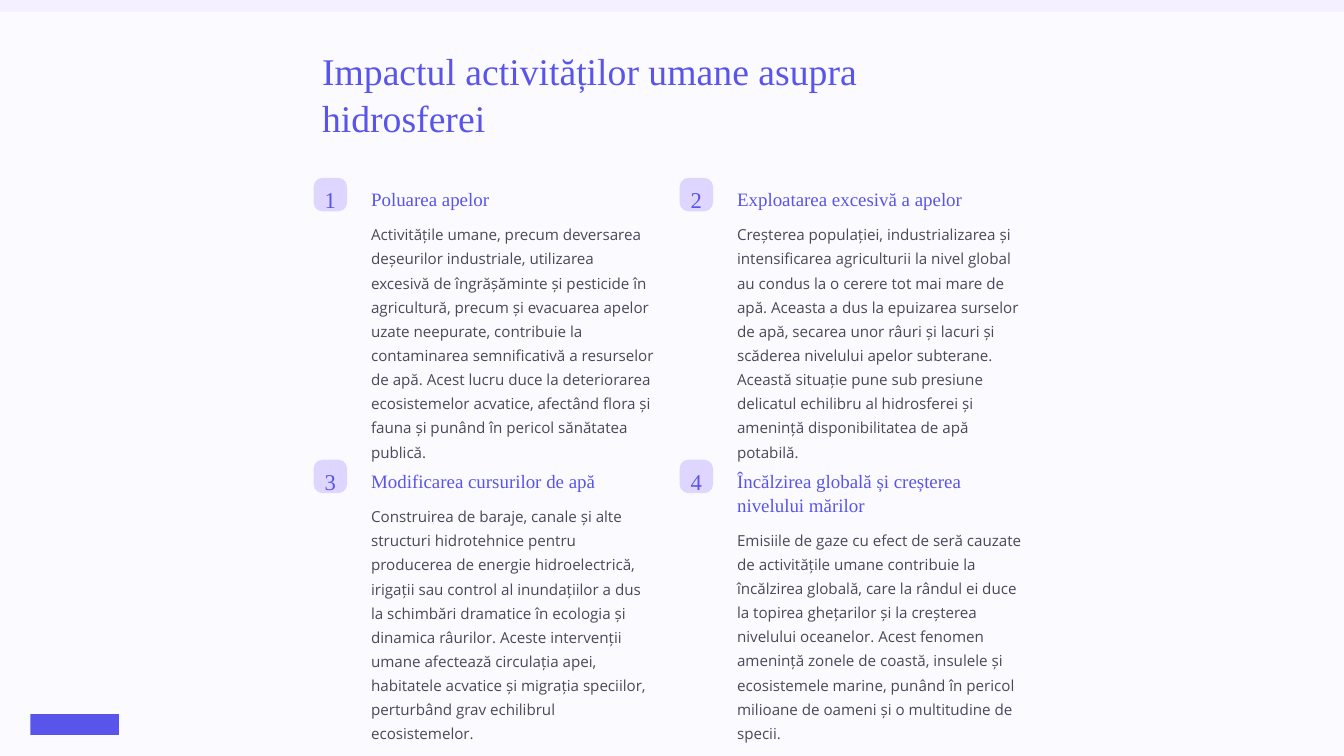
from pptx import Presentation
from pptx.dml.color import RGBColor
from pptx.enum.shapes import MSO_SHAPE
from pptx.enum.text import MSO_ANCHOR, MSO_AUTO_SIZE, PP_ALIGN
from pptx.util import Pt

# Content
TITLE = "Impactul activităților umane asupra hidrosferei"
# heading, heading lines, body
CARDS = [
    ("Poluarea apelor", 1,
     "Activitățile umane, precum deversarea deșeurilor industriale, utilizarea "
     "excesivă de îngrășăminte și pesticide în agricultură, precum și evacuarea "
     "apelor uzate neepurate, contribuie la contaminarea semnificativă a "
     "resurselor de apă. Acest lucru duce la deteriorarea ecosistemelor "
     "acvatice, afectând flora și fauna și punând în pericol sănătatea publică."),
    ("Exploatarea excesivă a apelor", 1,
     "Creșterea populației, industrializarea și intensificarea agriculturii la "
     "nivel global au condus la o cerere tot mai mare de apă. Aceasta a dus la "
     "epuizarea surselor de apă, secarea unor râuri și lacuri și scăderea "
     "nivelului apelor subterane. Această situație pune sub presiune delicatul "
     "echilibru al hidrosferei și amenință disponibilitatea de apă potabilă."),
    ("Modificarea cursurilor de apă", 1,
     "Construirea de baraje, canale și alte structuri hidrotehnice pentru "
     "producerea de energie hidroelectrică, irigații sau control al "
     "inundațiilor a dus la schimbări dramatice în ecologia și dinamica "
     "râurilor. Aceste intervenții umane afectează circulația apei, habitatele "
     "acvatice și migrația speciilor, perturbând grav echilibrul ecosistemelor."),
    ("Încălzirea globală și creșterea nivelului mărilor", 2,
     "Emisiile de gaze cu efect de seră cauzate de activitățile umane "
     "contribuie la încălzirea globală, care la rândul ei duce la topirea "
     "ghețarilor și la creșterea nivelului oceanelor. Acest fenomen amenință "
     "zonele de coastă, insulele și ecosistemele marine, punând în pericol "
     "milioane de oameni și o multitudine de specii."),
]

# Colours and fonts
VIOLET = RGBColor(0x59, 0x55, 0xEB)
GREY = RGBColor(0x49, 0x49, 0x5A)
LILAC = RGBColor(0xDE, 0xD6, 0xFF)
BAND = RGBColor(0xF4, 0xF0, 0xFF)
PAPER = RGBColor(0xFB, 0xFA, 0xFF)
SERIF, SANS = "Times New Roman", "Open Sans"

# Layout in points
WIDE, HIGH = 1152, 648
LEFT, TOP = 268.8, 152.4
STEP_X, STEP_Y = 313.7, 241.6
BADGE, INDENT, TEXT_W = 28.8, 42.2, 258.5
HEAD_LINE, BODY_LINE = 20.2, 20.7

deck = Presentation()
deck.slide_width, deck.slide_height = Pt(WIDE), Pt(HIGH)
slide = deck.slides.add_slide(deck.slide_layouts[5])


def add_block(kind, x, y, w, h, fill):
    block = slide.shapes.add_shape(kind, Pt(x), Pt(y), Pt(w), Pt(h))
    block.shadow.inherit = False
    block.fill.solid()
    block.fill.fore_color.rgb = fill
    block.line.fill.background()
    return block


def add_text(text, x, y, w, h, *, size, line, font=SERIF, color=VIOLET,
             align=PP_ALIGN.LEFT, wrap=True, box=None):
    box = box or slide.shapes.add_textbox(0, 0, 0, 0)
    box.left, box.top, box.width, box.height = Pt(x), Pt(y), Pt(w), Pt(h)
    frame = box.text_frame
    frame.text = text
    frame.word_wrap = wrap
    frame.auto_size = MSO_AUTO_SIZE.NONE
    frame.vertical_anchor = MSO_ANCHOR.TOP
    para = frame.paragraphs[0]
    para.alignment, para.line_spacing = align, Pt(line)
    style = para.runs[0].font
    style.name, style.size = font, Pt(size)
    style.color.rgb = color


# Background with a band along the top
add_block(MSO_SHAPE.RECTANGLE, 0, 0, WIDE, HIGH, BAND)
add_block(MSO_SHAPE.RECTANGLE, 0, 10, WIDE, HIGH - 10, PAPER)

# Title, brought in front of the background
title = slide.shapes.title
slide.shapes._spTree.append(title._element)
add_text(TITLE, LEFT, 35.4, 614.2, 80.8, size=32.36, line=40.4, box=title)

# Numbered cards in a two by two grid
for i, (head, lines, body) in enumerate(CARDS):
    row, col = divmod(i, 2)
    x, y = LEFT + col * STEP_X, TOP + row * STEP_Y
    badge = add_block(MSO_SHAPE.ROUNDED_RECTANGLE, x, y, BADGE, BADGE, LILAC)
    badge.adjustments[0] = 0.27
    add_text(str(i + 1), x, y + 2.4, BADGE, 24.2, size=19.4, line=24.2,
             align=PP_ALIGN.CENTER, wrap=False)
    add_text(head, x + INDENT, y + 4.5, TEXT_W, lines * HEAD_LINE,
             size=16.2, line=HEAD_LINE)
    add_text(body, x + INDENT, y + 12.2 + lines * HEAD_LINE, TEXT_W,
             (10 - lines) * BODY_LINE, size=12.96, line=BODY_LINE,
             font=SANS, color=GREY)

# Plain bar in the corner
add_block(MSO_SHAPE.RECTANGLE, 26, 612, 76, 18, VIOLET)

deck.save("out.pptx")
